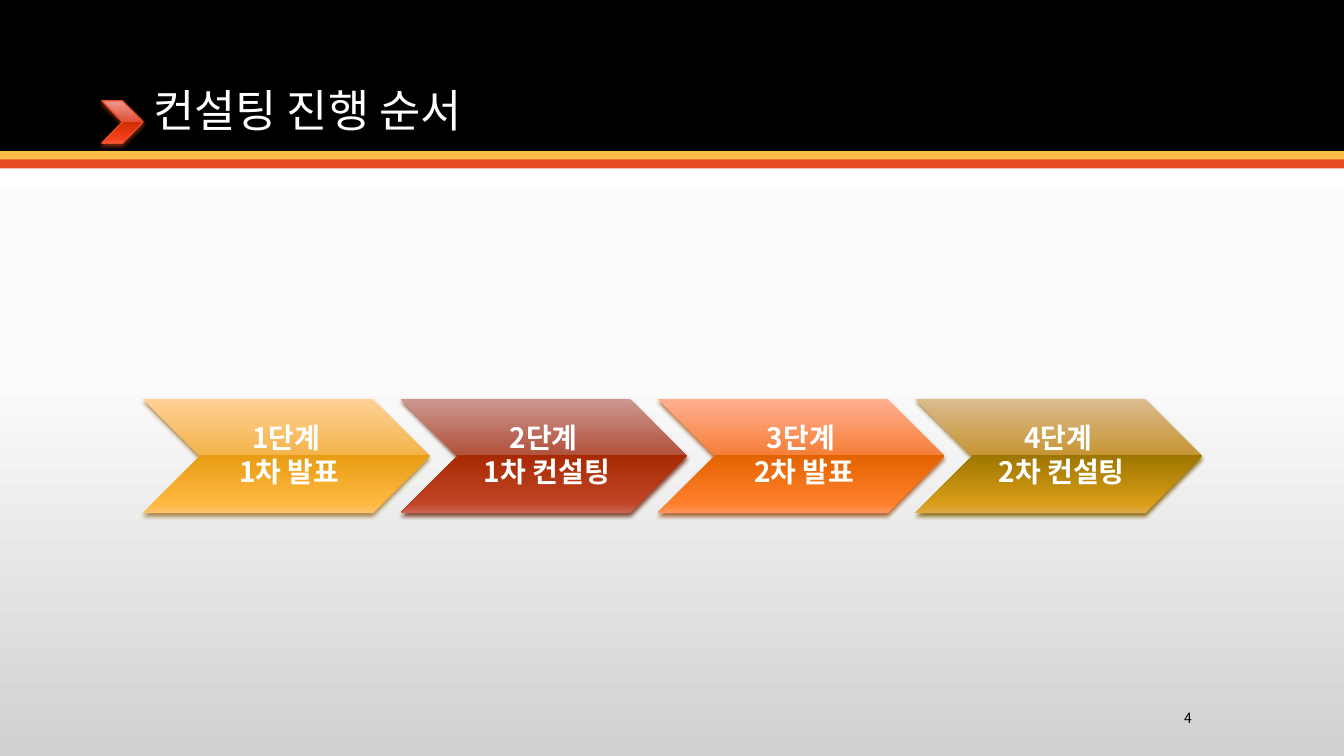
from lxml import etree
from pptx import Presentation
from pptx.dml.color import RGBColor
from pptx.enum.shapes import MSO_SHAPE
from pptx.enum.text import MSO_ANCHOR, PP_ALIGN
from pptx.oxml.ns import qn
from pptx.util import Inches, Pt

CHEVRON, RECTANGLE = MSO_SHAPE.CHEVRON, MSO_SHAPE.RECTANGLE
TOP, MIDDLE, BOTTOM = MSO_ANCHOR.TOP, MSO_ANCHOR.MIDDLE, MSO_ANCHOR.BOTTOM
LEFT, CENTER, RIGHT = PP_ALIGN.LEFT, PP_ALIGN.CENTER, PP_ALIGN.RIGHT

FONT = "Noto Sans CJK KR"
BLACK = RGBColor(0x00, 0x00, 0x00)
WHITE = RGBColor(0xFF, 0xFF, 0xFF)
AMBER = RGBColor(0xFF, 0xBD, 0x47)
RED = RGBColor(0xE8, 0x4C, 0x22)
BACKGROUND_STOPS = [(0, WHITE), (50, RGBColor(0xFB, 0xFB, 0xFB)), (100, RGBColor(0xD1, 0xD1, 0xD1))]
GLOSS_POSITIONS = (0, 49, 49, 92, 100)

prs = Presentation()
prs.slide_width, prs.slide_height = Inches(13.33), Inches(7.5)
slide = prs.slides.add_slide(prs.slide_layouts[6])


def set_gradient(owner, fill, stops):
    """Fill with a top-to-bottom gradient of (percent, colour) stops."""
    fill.gradient()
    fill.gradient_angle = 270
    stop_list = owner.element.find(".//" + qn("a:gsLst"))
    for old_stop in list(stop_list):
        stop_list.remove(old_stop)
    for percent, color in stops:
        stop = etree.SubElement(stop_list, qn("a:gs"), pos=str(percent * 1000))
        etree.SubElement(stop, qn("a:srgbClr"), val=str(color))


def write(frame, lines, size, color, align, anchor, bold=False, spacing=1.0, after=0):
    """Put lines into a text frame, one paragraph each."""
    frame.word_wrap = True
    frame.vertical_anchor = anchor
    frame.text = "\n".join(lines)
    for paragraph in frame.paragraphs:
        paragraph.alignment = align
        paragraph.line_spacing = spacing
        paragraph.space_after = Pt(after)
        for run in paragraph.runs:
            run.font.size, run.font.bold = Pt(size), bold
            run.font.name = FONT
            run.font.color.rgb = color
            etree.SubElement(run.font._element, qn("a:ea"), typeface=FONT)


# Background and header bands
set_gradient(slide, slide.background.fill, BACKGROUND_STOPS)
for top, height, color in [(0, 1.5, BLACK), (1.5, 0.09, AMBER), (1.58, 0.09, RED)]:
    band = slide.shapes.add_shape(RECTANGLE, 0, Inches(top), prs.slide_width, Inches(height))
    band.shadow.inherit = False
    band.fill.solid()
    band.fill.fore_color.rgb = color
    band.line.fill.background()

# Glossy chevrons: the title marker, then the four steps
STEP_LEFT, STEP_PITCH, STEP_TOP = 1.42, 2.553, 3.96
STEP_WIDTH, STEP_HEIGHT = 2.84, 1.13
steps = [
    (["1단계 ", "1차 발표"], "FFD197 F4B44C E89C13 FFB942 FFC36A", "9D752C"),
    (["2단계 ", "1차 컨설팅"], "CC9790 B1513C A82A02 C14526 C96654", "702D17"),
    (["3단계 ", "2차 발표"], "FFAF90 F57F39 E36200 FF802C FF945E", "9D5218"),
    (["4단계 ", "2차 컨설팅"], "DBBB8E C69534 9D7600 D99D17 DFA94C", "7E5E00"),
]
chevrons = [([], "EE9890 E05138 CD2C00 F6421D FA624D", "8F2F15", (1.01, 1, 0.41, 0.42))]
for index, step in enumerate(steps):
    chevrons.append((*step, (STEP_LEFT + index * STEP_PITCH, STEP_TOP, STEP_WIDTH, STEP_HEIGHT)))

for lines, gloss, shadow_color, box in chevrons:
    chevron = slide.shapes.add_shape(CHEVRON, *map(Inches, box))
    colors = [RGBColor.from_string(code) for code in gloss.split()]
    set_gradient(chevron, chevron.fill, zip(GLOSS_POSITIONS, colors))
    chevron.shadow.inherit = False
    effects = chevron.element.spPr.find(qn("a:effectLst"))
    shadow = etree.SubElement(effects, qn("a:outerShdw"), blurRad=str(Pt(3.1)), dist=str(Pt(2)),
                              dir="5400000", algn="ctr", rotWithShape="0")
    shadow_fill = etree.SubElement(shadow, qn("a:srgbClr"), val=shadow_color)
    etree.SubElement(shadow_fill, qn("a:alpha"), val="83000")
    if not lines:
        chevron.line.color.rgb = RED
        chevron.line.width = Pt(0.9)
        continue
    chevron.line.fill.background()
    label = slide.shapes.add_textbox(Inches(box[0] + STEP_HEIGHT / 2), Inches(STEP_TOP),
                                     Inches(STEP_WIDTH - STEP_HEIGHT), Inches(STEP_HEIGHT))
    frame = label.text_frame
    frame.margin_left = Inches(0.09)
    frame.margin_top = frame.margin_right = frame.margin_bottom = Inches(0.03)
    write(frame, lines, 20, WHITE, CENTER, MIDDLE, bold=True, spacing=0.9, after=2.5)

# Title and page number
title = slide.shapes.add_textbox(Inches(1.42), Inches(0.28), Inches(10.5), Inches(1.13))
write(title.text_frame, ["컨설팅 진행 순서"], 32, WHITE, LEFT, BOTTOM, spacing=0.9)
page_number = slide.shapes.add_textbox(Inches(10.42), Inches(6.97), Inches(1.5), Inches(0.3))
write(page_number.text_frame, ["4"], 10, BLACK, RIGHT, MIDDLE)

prs.save("out.pptx")
